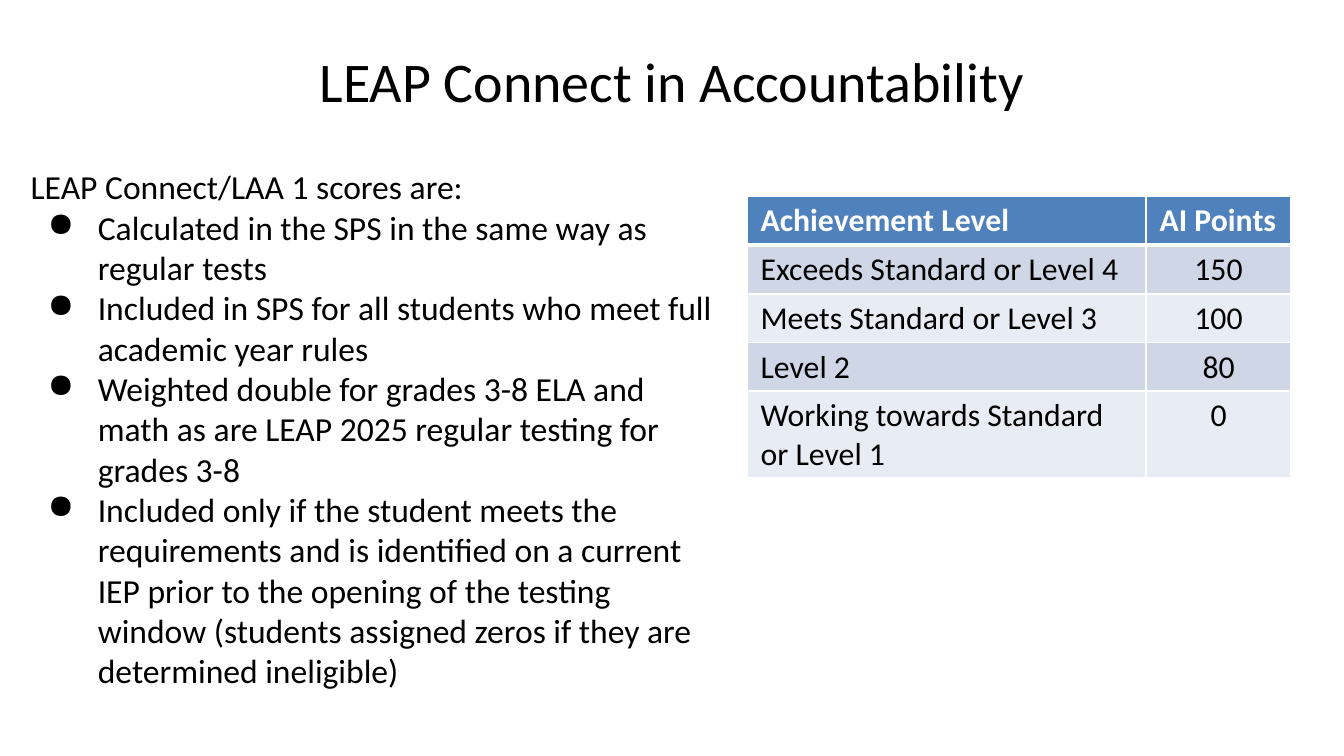
"""Build the slide on LEAP Connect in accountability."""
import pptx
import pptx.dml.color
import pptx.enum.text
import pptx.oxml.ns
import pptx.util
from lxml import etree

Cm, Pt = pptx.util.Cm, pptx.util.Pt
Align = pptx.enum.text.PP_ALIGN
Anchor = pptx.enum.text.MSO_ANCHOR

TITLE = "LEAP Connect in Accountability"
LEAD = "LEAP Connect/LAA 1 scores are:"
POINTS = [
    "Calculated in the SPS in the same way as regular tests",
    "Included in SPS for all students who meet full academic year rules",
    "Weighted double for grades 3-8 ELA and math as are LEAP 2025 regular testing for grades 3-8",
    "Included only if the student meets the requirements and is identified on a current IEP "
    "prior to the opening of the testing window (students assigned zeros if they are "
    "determined ineligible)",
]
ROWS = [
    ("Achievement Level", "AI Points"),
    ("Exceeds Standard or Level 4", "150"),
    ("Meets Standard or Level 3", "100"),
    ("Level 2", "80"),
    ("Working towards Standard or Level 1", "0"),
]
COLORS = {"text": "000000", "white": "FFFFFF", "head": "4F81BD",
          "dark": "CFD7E7", "light": "E8ECF4"}
FONT = "Calibri"
WIDTHS = (7.54, 2.74)
ROW_H = 0.76


def rgb(name):
    return pptx.dml.color.RGBColor.from_string(COLORS[name])


def add_xml(parent, tag, **attrs):
    return etree.SubElement(parent, pptx.oxml.ns.qn(tag), attrs)


def add_run(para, text, size, color="text", bold=False):
    run = para.add_run()
    run.text = text
    run.font.name = FONT
    run.font.size = Pt(size)
    run.font.bold = bold
    run.font.color.rgb = rgb(color)


def add_bullet(para):
    props = para._p.get_or_add_pPr()
    props.set("marL", str(Cm(1.27)))
    props.set("indent", str(Cm(-0.95)))
    add_xml(add_xml(props, "a:buClr"), "a:srgbClr", val=COLORS["text"])
    add_xml(props, "a:buChar", char="●")


def add_edges(cell, top, base):
    props = cell._tc.get_or_add_tcPr()
    for side, width in (("L", 1), ("R", 1), ("T", top), ("B", base)):
        line = add_xml(props, f"a:ln{side}", w=str(Pt(width)))
        add_xml(add_xml(line, "a:solidFill"), "a:srgbClr", val=COLORS["white"])


def add_title(slide):
    title = slide.shapes.title
    title.left, title.top, title.width, title.height = Cm(0), Cm(0), Cm(25.4), Cm(3.02)
    frame = title.text_frame
    frame.vertical_anchor = Anchor.MIDDLE
    frame.auto_size = pptx.enum.text.MSO_AUTO_SIZE.NONE
    para = frame.paragraphs[0]
    para.alignment = Align.CENTER
    add_run(para, TITLE, 30)


def add_list(slide):
    frame = slide.shapes.add_textbox(Cm(0.33), Cm(3.02), Cm(13.41), Cm(10.08)).text_frame
    frame.word_wrap = True
    add_run(frame.paragraphs[0], LEAD, 18)
    for point in POINTS:
        para = frame.add_paragraph()
        add_bullet(para)
        add_run(para, point, 18)


def add_grid(slide):
    table = slide.shapes.add_table(len(ROWS), len(WIDTHS), Cm(14.12), Cm(3.71),
                                   Cm(sum(WIDTHS)), Cm(ROW_H * len(ROWS))).table
    for col, width in zip(table.columns, WIDTHS):
        col.width = Cm(width)
    for r, row in enumerate(ROWS):
        table.rows[r].height = Cm(ROW_H)
        head = r == 0
        fill = "head" if head else ("light", "dark")[r % 2]
        for c, text in enumerate(row):
            cell = table.cell(r, c)
            add_edges(cell, 3 if r == 1 else 1, 3 if head else 1)
            cell.fill.solid()
            cell.fill.fore_color.rgb = rgb(fill)
            cell.margin_top = cell.margin_bottom = Cm(0.1)
            para = cell.text_frame.paragraphs[0]
            para.alignment = Align.CENTER if c and not head else Align.LEFT
            add_run(para, text, 17, "white" if head else "text", head)


def main():
    deck = pptx.Presentation()
    deck.slide_width, deck.slide_height = Cm(25.4), Cm(14.29)
    slide = deck.slides.add_slide(deck.slide_layouts[5])
    add_title(slide)
    add_list(slide)
    add_grid(slide)
    deck.save("out.pptx")


if __name__ == "__main__":
    main()
